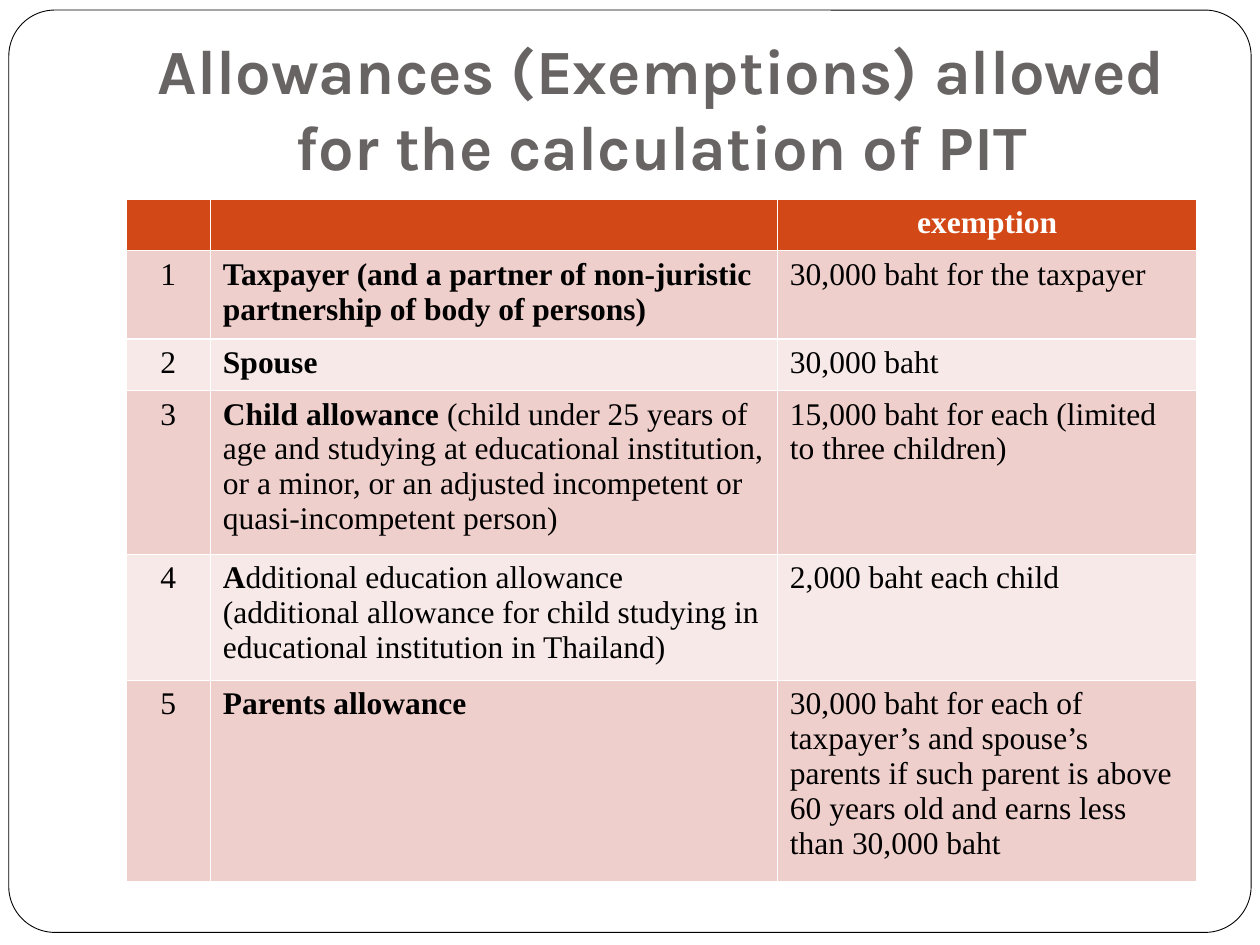
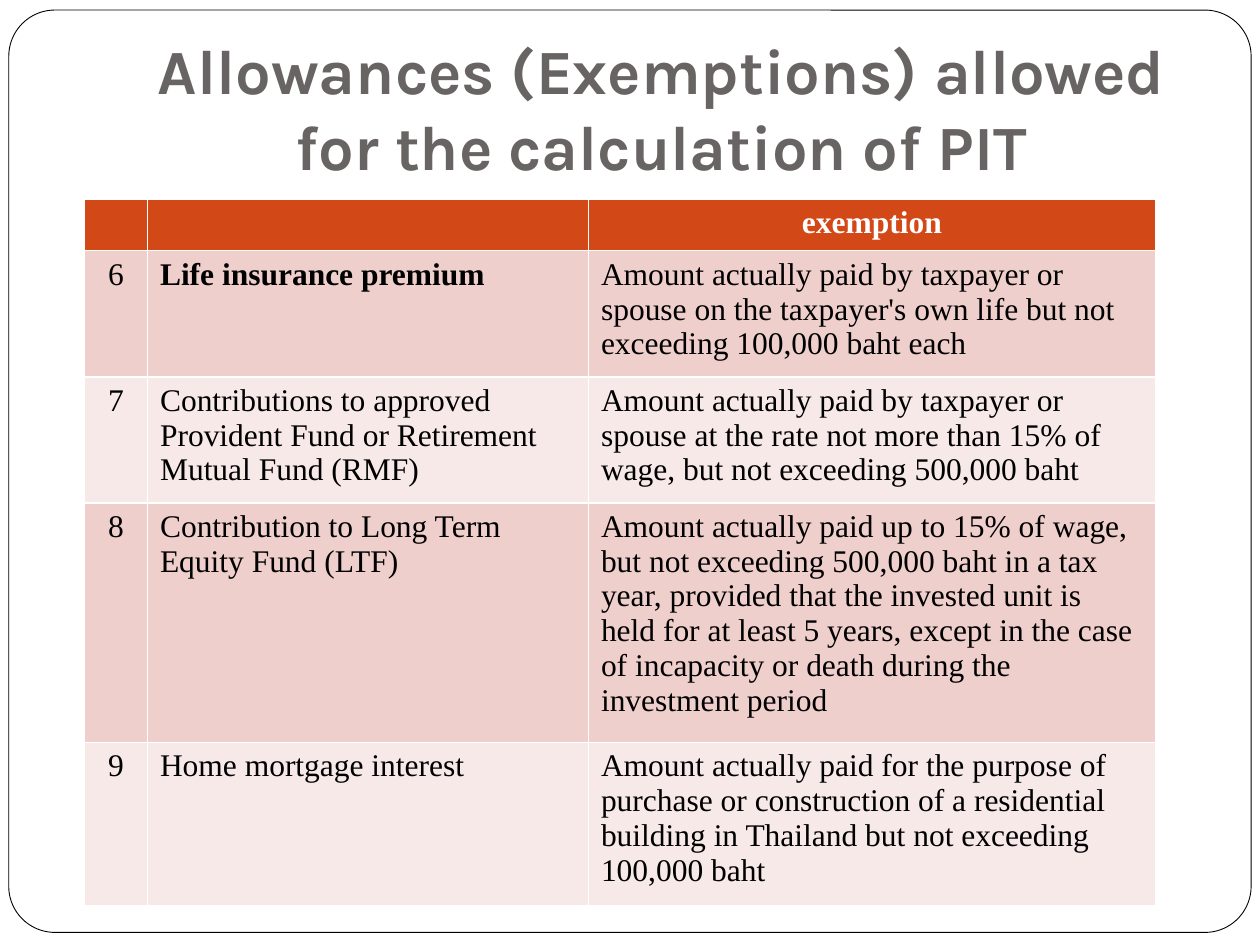
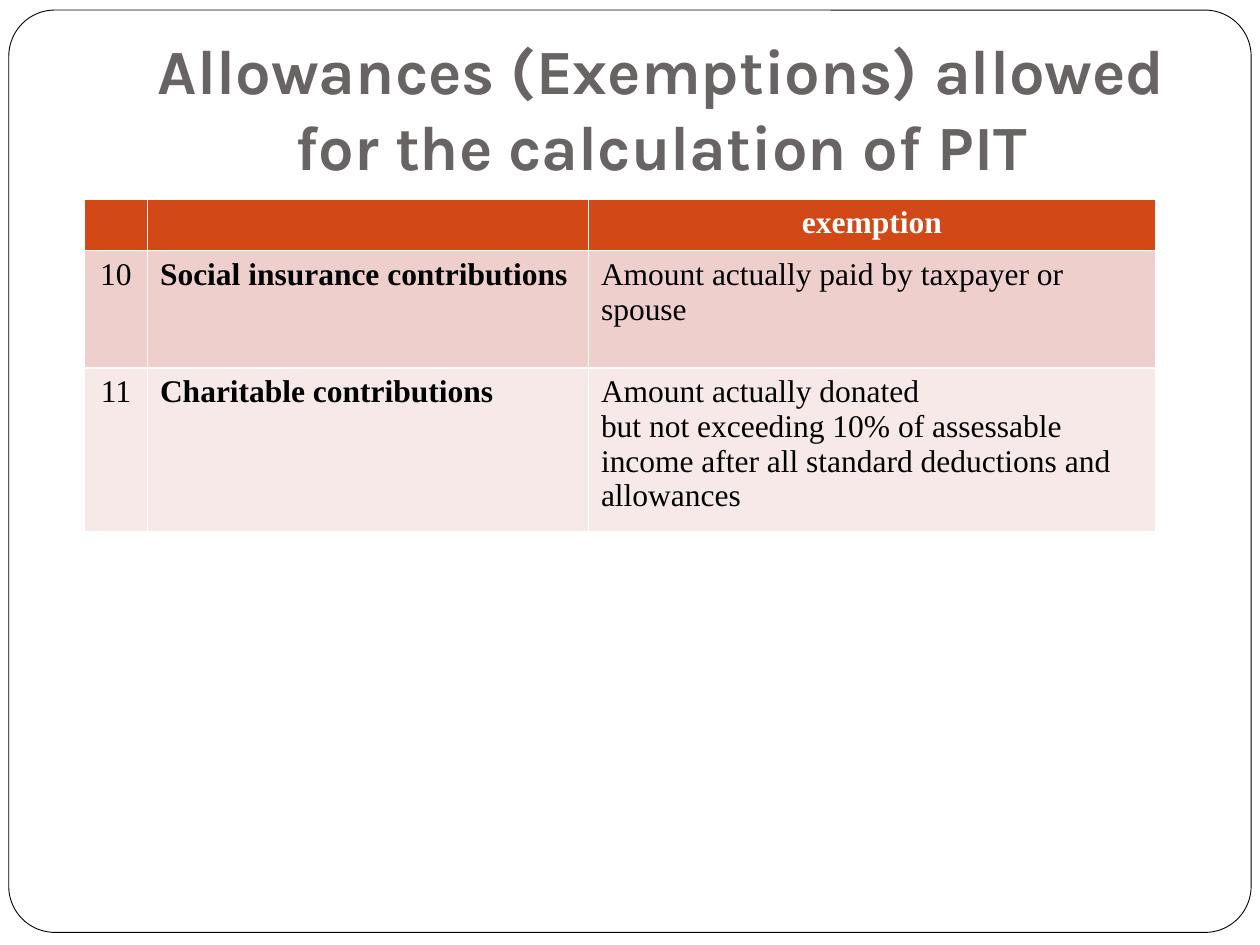
from pptx import Presentation
from pptx.dml.color import RGBColor
from pptx.enum.shapes import MSO_SHAPE
from pptx.enum.text import MSO_ANCHOR, PP_ALIGN
from pptx.util import Inches, Pt

ROUNDED = MSO_SHAPE.ROUNDED_RECTANGLE
BOTTOM = MSO_ANCHOR.BOTTOM
LEFT, CENTER = PP_ALIGN.LEFT, PP_ALIGN.CENTER

# Shared look
WHITE, BLACK, GREY = "FFFFFF", "000000", "696464"
HEADER_FILL = "D34817"
BAND_FILLS = ["EFCFCC", "F7E9E8"]
TITLE_FONT, BODY_FONT = "Karla", "Times New Roman"
TITLE = "Allowances (Exemptions) allowed for the calculation of PIT"
HEADER = ("", "", "exemption")
TABLE_TOP, HEADER_HEIGHT = 1.58, 0.41

# Each table: left edge, column widths, and rows of
# (height, number, bold part, plain part, exemption)
TABLES = [
    (1, [0.67, 4.5, 3.33], [
        (0.65, "1", "Taxpayer (and a partner of non-juristic partnership of body of persons)", "",
         "30,000 baht for the taxpayer"),
        (0.41, "2", "Spouse", "", "30,000 baht"),
        (1.21, "3", "Child allowance ",
         "(child under 25 years of age and studying at educational institution, "
         "or a minor, or an adjusted incompetent or quasi-incompetent person)",
         "15,000 baht for each (limited to three children)"),
        (0.93, "4", "A",
         "dditional education allowance (additional allowance for child studying "
         "in educational institution in Thailand)",
         "2,000 baht each child"),
        (1.48, "5", "Parents allowance", "",
         "30,000 baht for each of taxpayer’s and spouse’s parents if such parent "
         "is above 60 years old and earns less than 30,000 baht"),
    ]),
    (0.67, [0.5, 3.5, 4.5], [
        (0.93, "6", "Life insurance premium", "",
         "Amount actually paid by taxpayer or spouse on the taxpayer's own life "
         "but not exceeding 100,000 baht each"),
        (0.93, "7", "", "Contributions to approved Provident Fund or Retirement Mutual Fund (RMF)",
         "Amount actually paid by taxpayer or spouse at the rate not more than "
         "15% of wage, but not exceeding 500,000 baht"),
        (1.76, "8", "", "Contribution to Long Term Equity Fund (LTF)",
         "Amount actually paid up to 15% of wage, but not exceeding 500,000 baht "
         "in a tax year, provided that the invested unit is held for at least "
         "5 years, except in the case of incapacity or death during the investment period"),
        (1.2, "9", "", "Home mortgage interest",
         "Amount actually paid for the purpose of purchase or construction of a "
         "residential building in Thailand but not exceeding 100,000 baht"),
    ]),
    (0.67, [0.5, 3.5, 4.5], [
        (0.93, "10", "Social insurance contributions", "",
         "Amount actually paid by taxpayer or spouse"),
        (1.2, "11", "Charitable contributions", "",
         "Amount actually donated\nbut not exceeding 10% of assessable income "
         "after all standard deductions and allowances"),
    ]),
]


def rgb(value):
    return RGBColor.from_string(value)


def write(frame, bold_text, plain_text, align, color=BLACK, name=BODY_FONT, size=18):
    """Fill the first paragraph with a bold part followed by a plain part."""
    para = frame.paragraphs[0]
    para.alignment = align
    for text, bold in ((bold_text, True), (plain_text, False)):
        for number, line in enumerate(text.split("\n")):
            if number:
                para.add_line_break()
            if line:
                span = para.add_run()
                span.text = line
                span.font.name = name
                span.font.size = Pt(size)
                span.font.bold = bold
                span.font.color.rgb = rgb(color)


deck = Presentation()
deck.slide_width, deck.slide_height = Inches(10), Inches(7.5)

for left, widths, rows in TABLES:
    page = deck.slides.add_slide(deck.slide_layouts[6])

    # Rounded page frame
    border = page.shapes.add_shape(ROUNDED, Inches(0.07), Inches(0.08), Inches(9.86), Inches(7.32))
    border.adjustments[0] = 0.05
    border.shadow.inherit = False
    border.fill.solid()
    border.fill.fore_color.rgb = rgb(WHITE)
    border.line.color.rgb = rgb(BLACK)
    border.line.width = Pt(0.5)

    # Title
    box = page.shapes.add_textbox(Inches(1), Inches(0.3), Inches(8.5), Inches(1.25))
    box.text_frame.word_wrap = True
    box.text_frame.vertical_anchor = BOTTOM
    box.text_frame.margin_bottom = Inches(0.1)
    write(box.text_frame, TITLE, "", CENTER, GREY, TITLE_FONT, 36)

    # Table, whose default style draws the white rules
    heights = [HEADER_HEIGHT] + [row[0] for row in rows]
    table = page.shapes.add_table(
        len(heights), len(widths), Inches(left), Inches(TABLE_TOP),
        Inches(sum(widths)), Inches(sum(heights))).table
    for column, width in zip(table.columns, widths):
        column.width = Inches(width)
    for table_row, height in zip(table.rows, heights):
        table_row.height = Inches(height)

    # Header row
    for column, label in enumerate(HEADER):
        cell = table.cell(0, column)
        cell.fill.solid()
        cell.fill.fore_color.rgb = rgb(HEADER_FILL)
        write(cell.text_frame, label, "", CENTER, WHITE)

    # Allowance rows
    for index, (_, number, bold_part, plain_part, exemption) in enumerate(rows):
        contents = [("", number, CENTER), (bold_part, plain_part, LEFT), ("", exemption, LEFT)]
        for column, content in enumerate(contents):
            cell = table.cell(index + 1, column)
            cell.fill.solid()
            cell.fill.fore_color.rgb = rgb(BAND_FILLS[index % 2])
            write(cell.text_frame, *content)

deck.save("out.pptx")
